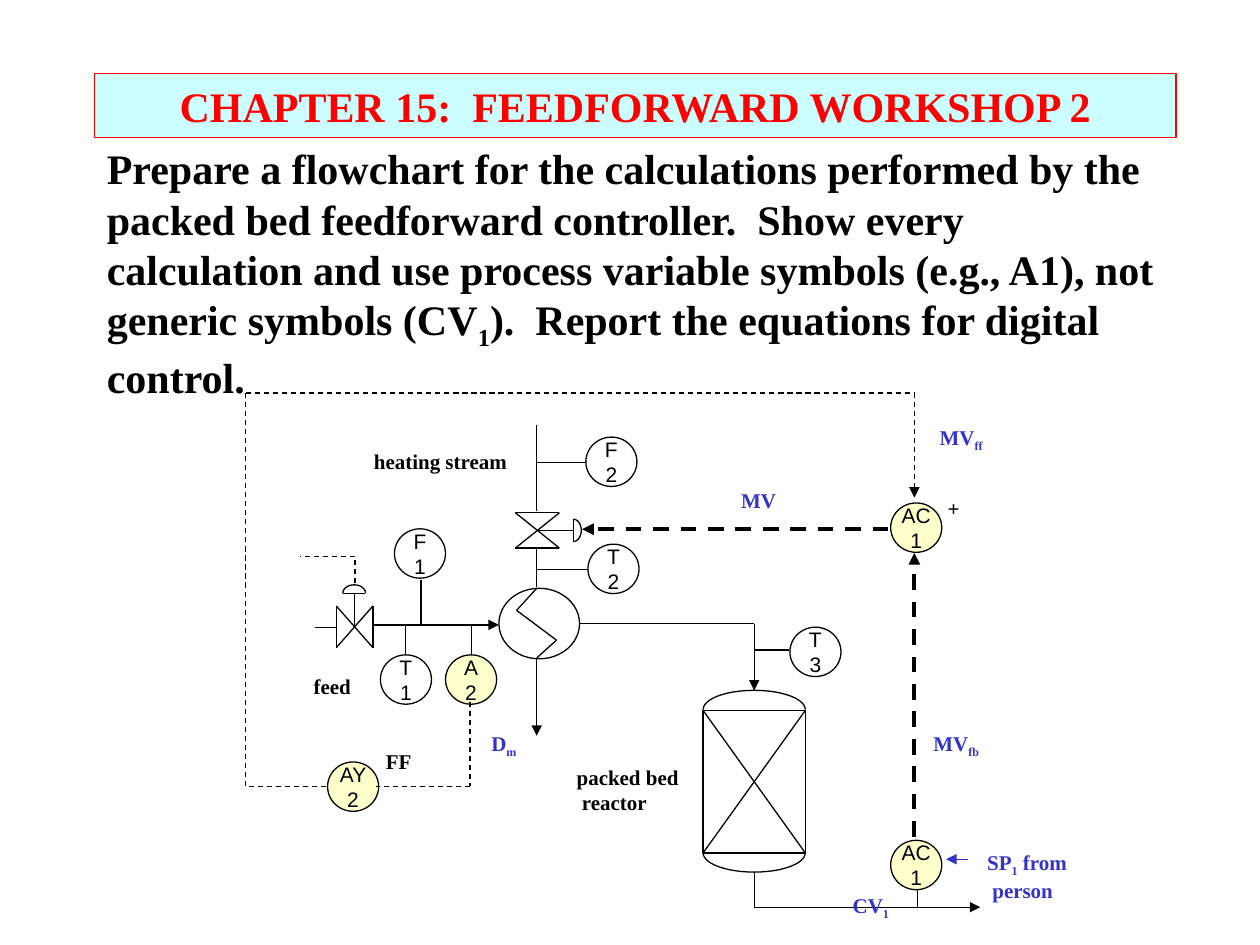
from itertools import pairwise
from math import cos, pi, sin

from lxml.etree import SubElement
from pptx import Presentation
from pptx.dml.color import RGBColor
from pptx.enum.dml import MSO_LINE
from pptx.enum.shapes import MSO_CONNECTOR, MSO_SHAPE
from pptx.enum.text import MSO_ANCHOR, MSO_AUTO_SIZE, PP_ALIGN
from pptx.oxml.ns import qn
from pptx.util import Pt

COLOURS = {
    "black": "000000",
    "red": "FF0000",
    "blue": "3333CC",
    "cyan": "CCFFFF",
    "yellow": "FFFFCC",
}
FONTS = {
    "heading": {"name": "Times New Roman", "size": Pt(24), "bold": True},
    "label": {"name": "Times New Roman", "size": Pt(12), "bold": True},
    "tag": {"name": "Arial", "size": Pt(12), "bold": False},
}
SOLID = {"width": Pt(0.75)}
SIGNAL = {"width": Pt(0.75), "dash_style": MSO_LINE.DASH}
CONTROL = {"width": Pt(2.25), "dash_style": MSO_LINE.DASH}

TITLE = "CHAPTER 15:  FEEDFORWARD WORKSHOP 2"
TASK = (
    "Prepare a flowchart for the calculations performed by the packed bed "
    "feedforward controller.  Show every calculation and use process variable "
    "symbols (e.g., A1), not generic symbols (CV_1_).  Report the equations "
    "for digital control."
)

# Main lines of the plant
STEAM_X, REACTOR_X, CONTROL_X = 306.7, 431, 522.5
VESSEL_LEFT, VESSEL_TOP, VESSEL_RIGHT, VESSEL_BOTTOM = 401.8, 406, 460.2, 487.4

# Letters, number, left, top, fill
INSTRUMENTS = [
    ("AC", "1", 509, 480.2, "yellow"),
    ("T", "3", 451.4, 358.4, None),
    ("T", "2", 336, 311, None),
    ("F", "2", 334.8, 249.8, None),
    ("F", "1", 225.4, 302.2, None),
    ("T", "1", 217.4, 374.2, None),
    ("A", "2", 254.6, 374.2, "yellow"),
    ("AY", "2", 187.2, 435.4, "yellow"),
    ("AC", "1", 509, 287.4, "yellow"),
]
# Text, left, top, width, colour, alignment; underscores enclose subscripts
LABELS = [
    ("feed", 172.2, 381.6, 36, "black", PP_ALIGN.LEFT),
    ("heating stream", 206.6, 252.7, 90.7, "black", PP_ALIGN.LEFT),
    ("packed bed\n reactor", 322.4, 433.4, 72.7, "black", PP_ALIGN.LEFT),
    ("SP_1_ from\n person", 557, 481.7, 61.2, "blue", PP_ALIGN.LEFT),
    ("MV_fb_", 526.3, 414, 41.8, "blue", PP_ALIGN.LEFT),
    ("CV_1_", 480.2, 506.2, 38.9, "blue", PP_ALIGN.LEFT),
    ("+", 534.2, 279.4, 21.6, "black", PP_ALIGN.CENTER),
    ("MV_ff_", 529.4, 239, 39.6, "blue", PP_ALIGN.CENTER),
    ("MV", 416.2, 275, 34.6, "blue", PP_ALIGN.CENTER),
    ("FF", 213.1, 424.1, 29.5, "black", PP_ALIGN.CENTER),
    ("D_m_", 273.2, 414, 29.5, "blue", PP_ALIGN.CENTER),
]


def colour(name):
    return RGBColor.from_string(COLOURS[name])


def apply_format(target, values):
    for name, value in values.items():
        setattr(target, name, value)


def write_text(frame, text, font, ink, align):
    for index, line in enumerate(text.split("\n")):
        para = frame.add_paragraph() if index else frame.paragraphs[0]
        para.alignment = align
        for part, words in enumerate(line.split("_")):
            if not words:
                continue
            span = para.add_run()
            span.text = words
            apply_format(span.font, FONTS[font])
            span.font.color.rgb = colour(ink)
            if part % 2:
                span.font._element.set("baseline", "-25000")


def style_shape(shape, fill=None, line="black"):
    shape.shadow.inherit = False
    if fill:
        shape.fill.solid()
        shape.fill.fore_color.rgb = colour(fill)
    else:
        shape.fill.background()
    shape.line.color.rgb = colour(line)
    apply_format(shape.line, SOLID)


def add_shape(page, kind, left, top, width, height, fill=None, line="black"):
    shape = page.shapes.add_shape(kind, Pt(left), Pt(top), Pt(width), Pt(height))
    style_shape(shape, fill, line)
    return shape


def add_text(page, text, left, top, width, height, font, ink, align, wrap):
    box = page.shapes.add_textbox(Pt(left), Pt(top), Pt(width), Pt(height))
    apply_format(box.text_frame, {
        "word_wrap": wrap,
        "auto_size": MSO_AUTO_SIZE.SHAPE_TO_FIT_TEXT,
    })
    write_text(box.text_frame, text, font, ink, align)


def add_instrument(page, letters, number, left, top, fill):
    bubble = add_shape(page, MSO_SHAPE.OVAL, left, top, 29.2, 28.2, fill)
    apply_format(bubble.text_frame, {
        "word_wrap": False, "vertical_anchor": MSO_ANCHOR.MIDDLE,
    })
    write_text(bubble.text_frame, f"{letters}\n{number}", "tag", "black",
               PP_ALIGN.CENTER)


def add_route(page, *points, style=SOLID, ink="black", arrow=False):
    """Draw straight lines through the points, with an optional end arrow."""
    for start, end in pairwise(points):
        line = page.shapes.add_connector(
            MSO_CONNECTOR.STRAIGHT, *(Pt(value) for value in start + end))
        line.line.color.rgb = colour(ink)
        apply_format(line.line, style)
        SubElement(line._element.spPr, qn("a:effectLst"))
    if arrow:
        SubElement(line.line._get_or_add_ln(), qn("a:tailEnd"), type="triangle")


def add_half_ellipse(page, x, y, radius_x, radius_y, start):
    """Draw an open half ellipse, clockwise from the start angle."""
    steps = 24
    angles = [start + pi * step / steps for step in range(steps + 1)]
    points = [(Pt(x + radius_x * cos(angle)), Pt(y + radius_y * sin(angle)))
              for angle in angles]
    builder = page.shapes.build_freeform(*points[0])
    builder.add_line_segments(points[1:], close=False)
    style_shape(builder.convert_to_shape())


def add_reactor(page):
    left, top, right, bottom = VESSEL_LEFT, VESSEL_TOP, VESSEL_RIGHT, VESSEL_BOTTOM
    add_shape(page, MSO_SHAPE.RECTANGLE, left, top, right - left, bottom - top)
    add_route(page, (right, top), (left, bottom))
    add_route(page, (left, top), (right, bottom))
    radius = (right - left) / 2
    add_half_ellipse(page, REACTOR_X, top - 0.5, radius, 11, pi)
    add_half_ellipse(page, REACTOR_X, bottom, radius, 11, 0)
    add_route(page, (REACTOR_X, 498.4), (REACTOR_X, 518.4), (560.2, 518.4),
              arrow=True)


def add_heater(page):
    add_shape(page, MSO_SHAPE.OVAL, 285.1, 336.2, 46.1, 40.3)
    add_route(page, (STEAM_X, 336.2), (295.2, 348.8), (318, 365.8), (STEAM_X, 376))
    add_route(page, (STEAM_X, 376), (STEAM_X, 420.5), arrow=True)


def add_valves(page):
    # Heating stream valve, actuator on the right
    left, top, right, bottom = 294.5, 293, 319.7, 313.2
    add_route(page, (left, top), (right, top), (left, bottom), (right, bottom),
              (left, top))
    add_route(page, (307.2, 303.1), (327.2, 303.1))
    add_route(page, (327.6, 296.9), (327.6, 309.3))
    add_half_ellipse(page, 327.6, 303.1, 4.6, 6.4, -pi / 2)
    # Feed valve, actuator on top
    left, top, right, bottom = 192.2, 346.3, 213.1, 370.1
    add_route(page, (left, top), (left, bottom), (right, top), (right, bottom),
              (left, top))
    add_route(page, (202.4, 358.6), (202.4, 339))
    add_route(page, (196, 339), (208.8, 339))
    add_half_ellipse(page, 202.4, 339, 6.5, 4.8, pi)


def add_pipes_and_taps(page):
    add_route(page, (STEAM_X, 292.3), (STEAM_X, 242.6))
    add_route(page, (STEAM_X, 335.5), (STEAM_X, 313.2))
    add_route(page, (192.2, 358.6), (180, 358.6))
    add_route(page, (213.1, 357.1), (285.1, 357.1), arrow=True)
    add_route(page, (331.2, 356.4), (REACTOR_X, 356.4), (REACTOR_X, 394.6),
              arrow=True)
    for x, y, pipe_x in [(334.8, 264.2, STEAM_X), (335.8, 325.4, STEAM_X),
                         (450.7, 371.5, REACTOR_X)]:
        add_route(page, (x, y), (pipe_x, y))
    for x, y, pipe_y in [(524.2, 507, 518.8), (240.5, 331.2, 356.4),
                         (231.8, 373.7, 357.6), (269.3, 373.7, 357.6)]:
        add_route(page, (x, y), (x, pipe_y))


def add_signals(page):
    add_route(page, (202.8, 333.4), (202.8, 318.2), (171.4, 318.2), style=SIGNAL)
    add_route(page, (268.6, 401), (268.6, 449.3), (214.6, 449.3), style=SIGNAL)
    add_route(page, (186.5, 449.3), (140.4, 449.3), (140.4, 224.6),
              (CONTROL_X, 224.6), (CONTROL_X, 284.4), style=SIGNAL, arrow=True)
    add_route(page, (CONTROL_X, 478.2), (CONTROL_X, 316), style=CONTROL, arrow=True)
    add_route(page, (507.6, 302.4), (332.6, 302.4), style=CONTROL, arrow=True)
    add_route(page, (553, 491), (540.7, 491), ink="blue", arrow=True)


def main():
    deck = Presentation()
    deck.slide_width, deck.slide_height = Pt(720), Pt(540)
    page = deck.slides.add_slide(deck.slide_layouts[6])

    # Heading and task
    banner = add_shape(page, MSO_SHAPE.RECTANGLE, 54, 42, 618, 36.5, "cyan", "red")
    write_text(banner.text_frame, TITLE, "heading", "red", PP_ALIGN.CENTER)
    add_text(page, TASK, 54, 78, 618, 151.2, "heading", "black", PP_ALIGN.LEFT, True)

    # Process diagram
    add_reactor(page)
    add_heater(page)
    add_valves(page)
    add_pipes_and_taps(page)
    for instrument in INSTRUMENTS:
        add_instrument(page, *instrument)
    add_signals(page)
    for text, left, top, width, ink, align in LABELS:
        height = 7.2 + 14.4 * len(text.split("\n"))
        add_text(page, text, left, top, width, height, "label", ink, align, False)

    deck.save("out.pptx")


if __name__ == "__main__":
    main()
